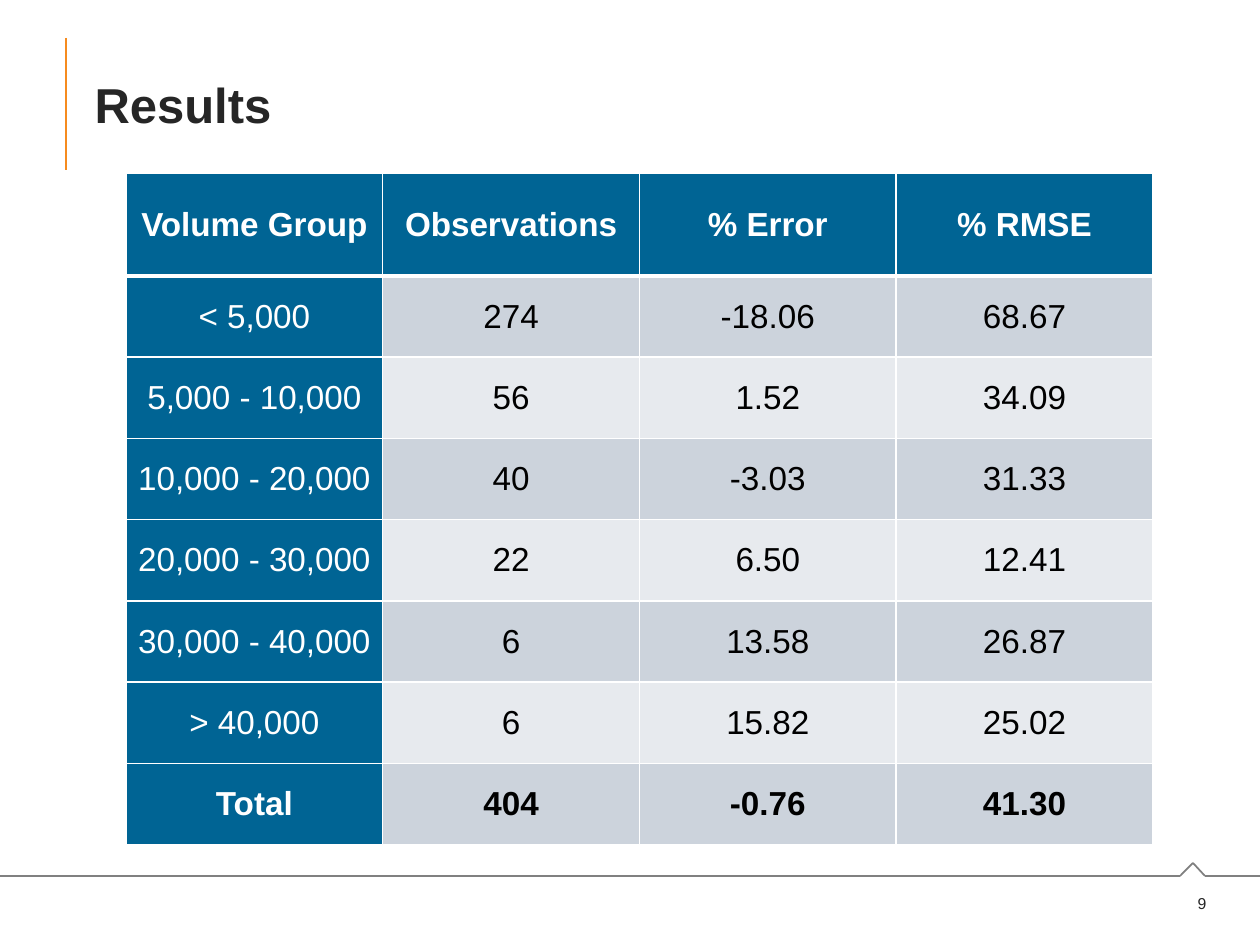
from itertools import pairwise

from lxml.etree import SubElement
from pptx import Presentation
from pptx.dml.color import RGBColor
from pptx.enum.shapes import MSO_CONNECTOR
from pptx.enum.text import MSO_ANCHOR, MSO_AUTO_SIZE, PP_ALIGN
from pptx.oxml.ns import qn
from pptx.util import Pt

EMU_PER_PX = 914400 / 126
FONT = "Arial"
COLORS = {
    "accent": "F68B1F",
    "rule": "808080",
    "heading": "262626",
    "header": "006494",
    "band_dark": "CCD3DC",
    "band_light": "E7EAEE",
    "white": "FFFFFF",
    "black": "000000",
}
RESULTS = [
    ("Volume Group", "Observations", "% Error", "% RMSE"),
    ("< 5,000", "274", "-18.06", "68.67"),
    ("5,000 - 10,000", "56", "1.52", "34.09"),
    ("10,000 - 20,000", "40", "-3.03", "31.33"),
    ("20,000 - 30,000", "22", "6.50", "12.41"),
    ("30,000 - 40,000", "6", "13.58", "26.87"),
    ("> 40,000", "6", "15.82", "25.02"),
    ("Total", "404", "-0.76", "41.30"),
]
FOOTER_RULE = [(0, 876), (1180, 876), (1193, 863), (1205, 876), (1260, 876)]


def px(*lengths):
    return [round(length * EMU_PER_PX) for length in lengths]


def rgb(name):
    return RGBColor.from_string(COLORS[name])


class SlideBuilder:
    def __init__(self, slide):
        self.slide = slide

    def add_text(self, frame, text, size, color, bold=False, align=PP_ALIGN.LEFT):
        paragraph = frame.paragraphs[0]
        paragraph.alignment = align
        run = paragraph.add_run()
        run.text = text
        run.font.name = FONT
        run.font.size = Pt(size)
        run.font.bold = bold
        run.font.color.rgb = rgb(color)

    def title(self, text, left, top, width, height):
        heading = self.slide.shapes.title
        heading.left, heading.top, heading.width, heading.height = px(left, top, width, height)
        heading.text_frame.vertical_anchor = MSO_ANCHOR.MIDDLE
        self.add_text(heading.text_frame, text, 28, "heading", bold=True)

    def line(self, start, end, color, weight):
        connector = self.slide.shapes.add_connector(
            MSO_CONNECTOR.STRAIGHT, *px(*start, *end))
        connector.line.color.rgb = rgb(color)
        connector.line.width = Pt(weight)
        SubElement(connector.element.spPr, qn("a:effectLst"))

    def page_number(self, text, left, top, width, height):
        frame = self.slide.shapes.add_textbox(*px(left, top, width, height)).text_frame
        frame.word_wrap = False
        frame.auto_size = MSO_AUTO_SIZE.SHAPE_TO_FIT_TEXT
        frame.vertical_anchor = MSO_ANCHOR.MIDDLE
        self.add_text(frame, text, 9, "heading", align=PP_ALIGN.RIGHT)

    def cell_borders(self, cell, weights):
        """Draw white borders; weights maps an edge tag to points, in schema order."""
        properties = cell._tc.get_or_add_tcPr()
        for index, (edge, weight) in enumerate(weights.items()):
            border = properties.makeelement(qn(f"a:{edge}"), {"w": str(Pt(weight))})
            fill = SubElement(border, qn("a:solidFill"))
            SubElement(fill, qn("a:srgbClr"), val=COLORS["white"])
            properties.insert(index, border)

    def table(self, rows, left, top, width, header_height, body_height):
        last = len(rows) - 1
        table = self.slide.shapes.add_table(
            len(rows), len(rows[0]),
            *px(left, top, width, header_height + body_height)).table
        for column in table.columns:
            column.width = px(width / len(rows[0]))[0]
        for r, values in enumerate(rows):
            table.rows[r].height = px(body_height / last if r else header_height)[0]
            for c, value in enumerate(values):
                cell = table.cell(r, c)
                is_label = r == 0 or c == 0
                band = "band_dark" if r % 2 else "band_light"
                cell.fill.solid()
                cell.fill.fore_color.rgb = rgb("header" if is_label else band)
                cell.vertical_anchor = MSO_ANCHOR.MIDDLE
                cell.margin_left = cell.margin_right = px(9)[0]
                cell.margin_top = cell.margin_bottom = 0
                self.add_text(cell.text_frame, value, 19, "white" if is_label else "black",
                              bold=r in (0, last), align=PP_ALIGN.CENTER)
                self.cell_borders(cell, {"lnL": 1, "lnR": 1,
                                         "lnT": 3 if r == 1 else 1,
                                         "lnB": 3 if r == 0 else 1})


def main():
    deck = Presentation()
    deck.slide_width, deck.slide_height = px(1260, 945)
    title_only = deck.slide_layouts[5]
    builder = SlideBuilder(deck.slides.add_slide(title_only))
    builder.line((66, 38), (66, 170), "accent", 1.5)
    for start, end in pairwise(FOOTER_RULE):
        builder.line(start, end, "rule", 1)
    builder.page_number("9", 1166, 887, 53, 32)
    builder.title("Results", 82, 38, 1115, 132)
    builder.table(RESULTS, 126, 173, 1027, 103, 569)
    deck.save("out.pptx")


if __name__ == "__main__":
    main()
